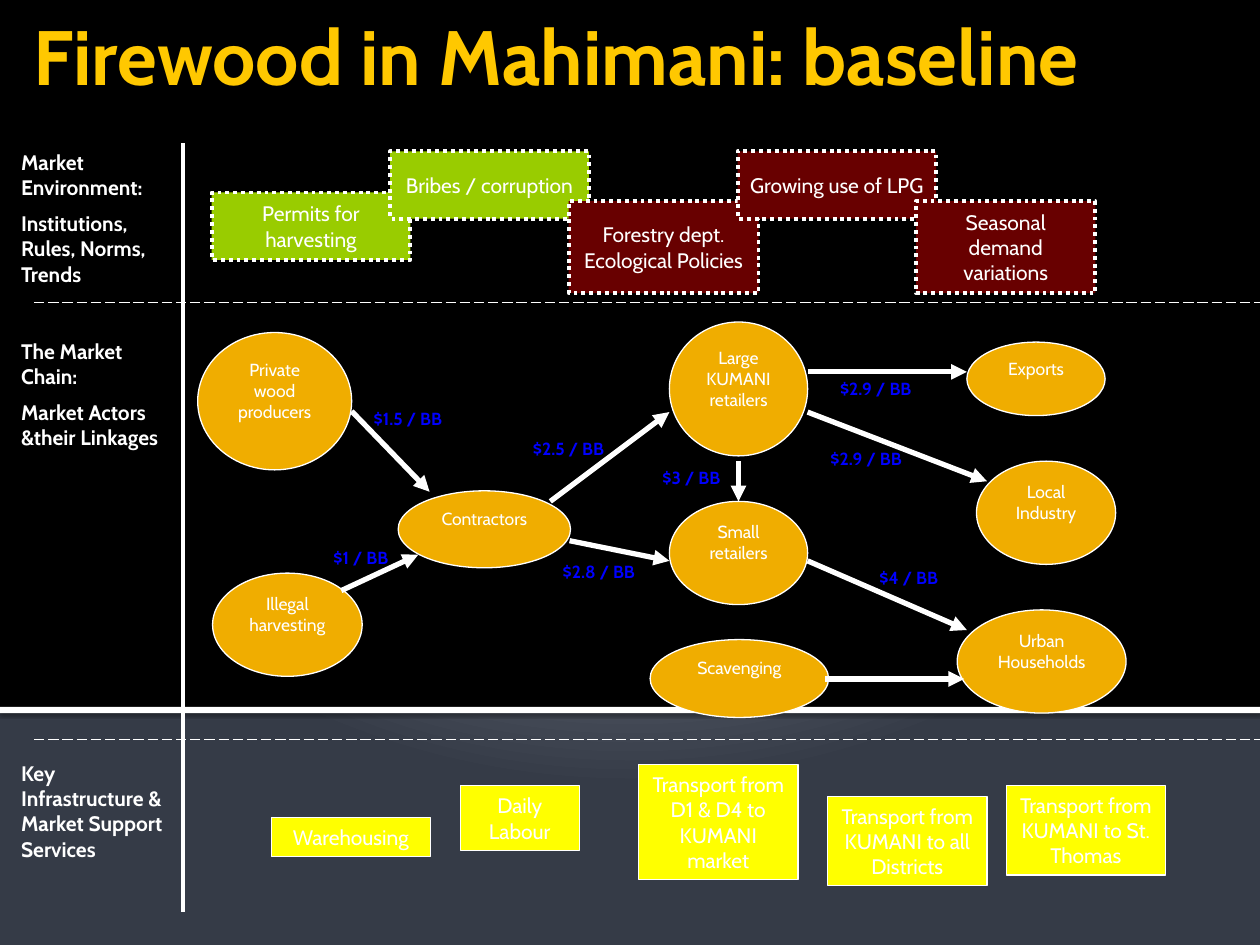
from dataclasses import dataclass
from typing import NamedTuple

import pptx
import pptx.dml.color
import pptx.enum.dml
import pptx.enum.shapes
import pptx.enum.text
import pptx.oxml
import pptx.oxml.ns
import pptx.util

Pt = pptx.util.Pt
RGB = pptx.dml.color.RGBColor.from_string
Dash = pptx.enum.dml.MSO_LINE
Preset = pptx.enum.shapes.MSO_SHAPE
Align = pptx.enum.text.PP_ALIGN
Anchor = pptx.enum.text.MSO_ANCHOR
NAMESPACE = pptx.oxml.ns.nsdecls("a")


@dataclass(frozen=True)
class Theme:
    font: str = "Cabin"
    white: str = "FFFFFF"
    black: str = "000000"
    title: str = "FFC800"
    price: str = "0000FF"
    actor: str = "F0AD00"
    service: str = "FFFF00"
    favourable: str = "99CC00"
    adverse: str = "680000"
    backdrop: tuple = ((0, "C1C5D3"), (12, "C1C5D3"), (20, "BFC4D2"), (100, "353B47"))
    title_size: float = 44
    body_size: float = 12
    small_size: float = 10
    thin: float = 0.75
    medium: float = 2.25
    thick: float = 3


THEME = Theme()


class Node(NamedTuple):
    text: str
    left: float
    top: float
    width: float
    height: float
    fill: str


class Label(NamedTuple):
    text: str
    left: float
    top: float
    width: float
    height: float


class Line(NamedTuple):
    x1: float
    y1: float
    x2: float
    y2: float


ACTORS = [
    Node(text, *frame, THEME.actor) for text, *frame in (
        ("Private wood producers", 113, 190, 88, 78.5),
        ("Illegal harvesting", 121.5, 327.5, 85.5, 59),
        ("Contractors", 227.5, 280.5, 98.5, 44),
        ("Large KUMANI retailers", 382.5, 184, 79, 76.5),
        ("Small retailers", 382.5, 286.5, 79, 59),
        ("Scavenging", 371.5, 365.5, 102, 44.5),
        ("Exports", 552.5, 195.5, 79, 42),
        ("Local Industry", 558, 263.5, 79.5, 59),
        ("Urban Households", 547, 348.5, 96.5, 59),
    )
]
SERVICES = [
    Node(text, *frame, THEME.service) for text, *frame in (
        ("Warehousing", 155, 467, 91, 22.5),
        ("Daily\nLabour", 263, 449, 68, 37),
        ("Transport from D1 & D4 to KUMANI market", 365, 437, 91, 65.5),
        ("Transport from KUMANI to all Districts", 473, 455, 91, 51),
        ("Transport from KUMANI to St. Thomas", 575, 449, 91, 51),
    )
]
INFLUENCES = [
    Node("Permits for harvesting", 121, 110, 113.5, 38.5, THEME.favourable),
    Node("Bribes / corruption", 223, 86.5, 113.5, 38.5, THEME.favourable),
    Node("Forestry dept. Ecological Policies", 325, 115, 108.5, 52.5, THEME.adverse),
    Node("Growing use of LPG", 421.5, 86.5, 113.5, 38.5, THEME.adverse),
    Node("Seasonal demand variations", 523.5, 115, 102.5, 52.5, THEME.adverse),
]
SECTIONS = [
    Label("Market Environment:\nInstitutions, Rules, Norms, Trends", 5, 82, 99.5, 111.5),
    Label("The Market Chain:\nMarket Actors &their Linkages", 5, 190, 93.5, 119),
    Label("Key Infrastructure & Market Support Services", 5, 431, 102, 104.5),
]
PRICES = [
    Label(f"${amount} / BB", left, top, 80, 19.5) for amount, left, top in (
        ("1.5", 206.5, 229.5), ("1", 183.5, 309), ("2.5", 297.5, 247),
        ("2.8", 314.5, 317), ("3", 371.5, 263.5), ("4", 495.5, 320.5),
        ("2.9", 473, 212.5), ("2.9", 467.5, 252.5),
    )
]
DIVIDERS = [Line(19.5, 422.5, 720, 422.5), Line(19.5, 173, 720, 173)]
AXIS = Line(104.5, 82, 104.5, 521)
FLOWS = [
    Line(195, 337.5, 239, 317), Line(201, 235, 245.5, 281),
    Line(314.5, 286.5, 382.5, 235.5), Line(325.5, 309, 382.5, 320.5),
    Line(422, 263.5, 422, 286.5), Line(471.5, 388, 551, 388),
    Line(461.5, 320.5, 552.5, 360), Line(461.5, 212.5, 552.5, 212.5),
    Line(461.5, 235.5, 564, 275),
]


def write_text(shape, text: str, size: float, colour: str, bold: bool = False,
               centred: bool = False, gap: float = 0) -> None:
    """Fill a shape with one styled paragraph per line of text."""
    frame = shape.text_frame
    frame.word_wrap = True
    frame.vertical_anchor = Anchor.MIDDLE if centred else Anchor.TOP
    formats = {"name": THEME.font, "size": Pt(size), "bold": bold}
    for index, words in enumerate(text.split("\n")):
        para = frame.add_paragraph() if index else frame.paragraphs[0]
        para.alignment = Align.CENTER if centred else Align.LEFT
        para.space_before = Pt(gap if index else 0)
        span = para.add_run()
        span.text = words
        for name, value in formats.items():
            setattr(span.font, name, value)
        span.font.color.rgb = RGB(colour)


def draw_label(page, label: Label, size: float, colour: str) -> None:
    """Add a bold, left-aligned text box."""
    box = page.shapes.add_textbox(*map(Pt, label[1:]))
    write_text(box, label.text, size, colour, bold=True, gap=6)


def draw_node(page, node: Node, preset=Preset.RECTANGLE, size: float = THEME.body_size,
              weight: float = THEME.thin, dash=None, lift: float = 0):
    """Add a filled shape with centred text, raised by half of lift."""
    shape = page.shapes.add_shape(preset, *map(Pt, node[1:5]))
    shape.shadow.inherit = False
    shape.fill.solid()
    shape.fill.fore_color.rgb = RGB(node.fill)
    if weight:
        shape.line.color.rgb = RGB(THEME.white)
        shape.line.width = Pt(weight)
        shape.line.dash_style = dash
    else:
        shape.line.fill.background()
    if node.text:
        shape.text_frame.margin_bottom = Pt(3.6 + lift)
        write_text(shape, node.text, size, THEME.white, centred=True)
    return shape


def draw_line(page, line: Line, weight: float, dash=None, arrow: bool = False) -> None:
    """Add a straight white connector."""
    connector = page.shapes.add_connector(
        pptx.enum.shapes.MSO_CONNECTOR.STRAIGHT, *map(Pt, line))
    connector.line.color.rgb = RGB(THEME.white)
    connector.line.width = Pt(weight)
    connector.line.dash_style = dash
    if arrow:
        connector.line._get_or_add_ln().append(
            pptx.oxml.parse_xml(f'<a:tailEnd {NAMESPACE} type="triangle"/>'))
    connector._element.spPr.append(pptx.oxml.parse_xml(f"<a:effectLst {NAMESPACE}/>"))


def draw_backdrop(page) -> None:
    """Paint the radial background, the black panel and its white edge."""
    page.background.fill.solid()
    properties = page.element.find(".//" + pptx.oxml.ns.qn("p:bgPr"))
    stops = "".join(f'<a:gs pos="{place * 1000}"><a:srgbClr val="{colour}"/></a:gs>'
                    for place, colour in THEME.backdrop)
    properties.replace(properties[0], pptx.oxml.parse_xml(
        f'<a:gradFill {NAMESPACE} rotWithShape="1"><a:gsLst>{stops}</a:gsLst>'
        '<a:path path="circle"><a:fillToRect l="10000" t="-25000" r="10000" b="125000"/>'
        '</a:path></a:gradFill>'))
    draw_node(page, Node("", 0, 0, 720, 404.5, THEME.black), weight=0)
    edge = draw_node(page, Node("", 0, 404, 720, 3.5, THEME.white), weight=0)
    edge._element.spPr.find(pptx.oxml.ns.qn("a:effectLst")).append(pptx.oxml.parse_xml(
        f'<a:outerShdw {NAMESPACE} blurRad="{Pt(2.5)}" dist="{Pt(0.8)}" dir="5400000">'
        f'<a:srgbClr val="{THEME.black}"><a:alpha val="60000"/></a:srgbClr></a:outerShdw>'))


def main() -> None:
    """Build the market map and save it."""
    deck = pptx.Presentation()
    deck.slide_width, deck.slide_height = Pt(720), Pt(540)
    page = deck.slides.add_slide(deck.slide_layouts[6])
    draw_backdrop(page)
    draw_label(page, Label("Firewood in Mahimani: baseline", 12, 1.5, 691, 60.5),
               THEME.title_size, THEME.title)
    for divider in DIVIDERS:
        draw_line(page, divider, THEME.thin, Dash.LONG_DASH)
    draw_line(page, AXIS, THEME.medium)
    for section in SECTIONS:
        draw_label(page, section, THEME.body_size, THEME.white)
    for actor in ACTORS:
        draw_node(page, actor, Preset.OVAL, THEME.small_size, lift=12)
    for flow in FLOWS:
        draw_line(page, flow, THEME.thick, arrow=True)
    for service in SERVICES:
        draw_node(page, service)
    for influence in INFLUENCES:
        draw_node(page, influence, weight=THEME.medium, dash=Dash.ROUND_DOT)
    for price in PRICES:
        draw_label(page, price, THEME.small_size, THEME.price)
    deck.save("out.pptx")


if __name__ == "__main__":
    main()
